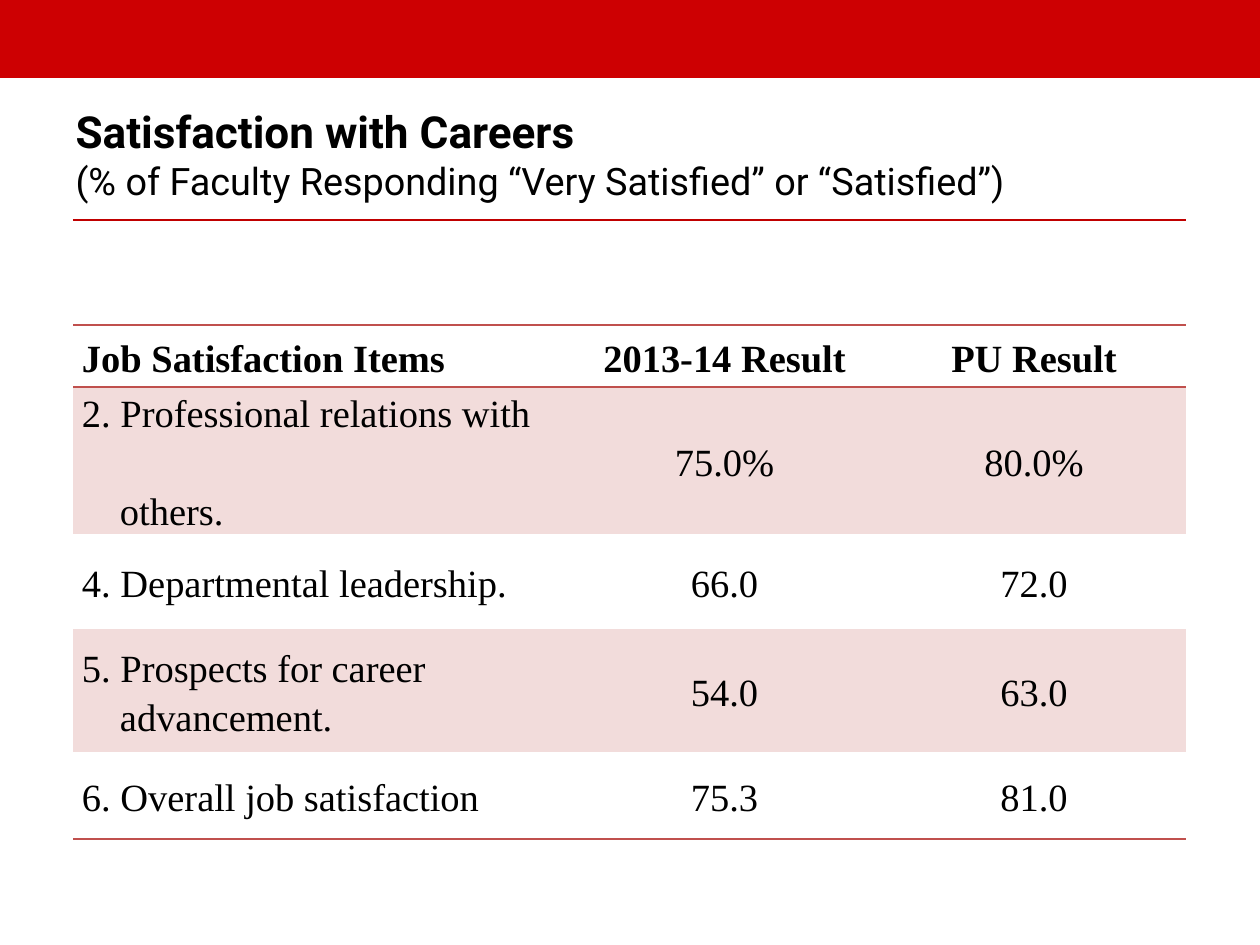
import pptx
import pptx.util
import pptx.dml.color
import pptx.enum.shapes
import pptx.enum.text
import pptx.oxml
import pptx.oxml.ns

SCALE = 914400 / 126
COLORS = {"banner": "CD0002", "rule": "C00000", "border": "C0504D",
          "band": "F2DCDB", "text": "000000"}
ALIGN = pptx.enum.text.PP_ALIGN
MIDDLE = pptx.enum.text.MSO_ANCHOR.MIDDLE
COLUMNS = [494, 315, 304]
HEIGHTS = [62, 146, 95, 123, 87]
HANGING = 38
ROWS = [
    (["Job Satisfaction Items"], "2013-14 Result", "PU Result"),
    (["2. Professional relations with", "others."], "75.0%", "80.0%"),
    (["4. Departmental leadership."], "66.0", "72.0"),
    (["5. Prospects for career", "advancement."], "54.0", "63.0"),
    (["6. Overall job satisfaction"], "75.3", "81.0"),
]
GAPS = {"others.": 28}


def px(length):
    """Turn pixels into EMU."""
    return pptx.util.Emu(round(length * SCALE))


def color(name):
    """Look up a named colour."""
    return pptx.dml.color.RGBColor.from_string(COLORS[name])


def apply(target, values):
    """Set attributes from a dict of format values."""
    for name, value in values.items():
        setattr(target, name, value)


def style_font(font, size, name, bold):
    """Format one font in the text colour."""
    apply(font, {"size": pptx.util.Pt(size), "name": name, "bold": bold})
    font.color.rgb = color("text")


def add_banner(page):
    """Draw the band across the top."""
    banner = page.shapes.add_shape(
        pptx.enum.shapes.MSO_SHAPE.RECTANGLE, 0, 0, px(1260), px(78))
    banner.shadow.inherit = False
    banner.fill.solid()
    banner.fill.fore_color.rgb = color("banner")
    banner.line.fill.background()


def add_title(page):
    """Fill the title placeholder with heading and subheading."""
    title = page.shapes.title
    apply(title, {"left": px(63), "top": px(98), "width": px(1187), "height": px(111)})
    frame = title.text_frame
    apply(frame, {"word_wrap": True, "vertical_anchor": MIDDLE,
                  "auto_size": pptx.enum.text.MSO_AUTO_SIZE.NONE})
    para = frame.paragraphs[0]
    para.alignment = ALIGN.LEFT
    heading = para.add_run()
    heading.text = "Satisfaction with Careers"
    style_font(heading.font, 25.2, "Roboto", True)
    para.add_line_break()
    subheading = para.add_run()
    subheading.text = "(% of Faculty Responding “Very Satisfied” or “Satisfied”)"
    style_font(subheading.font, 21.6, "Roboto", False)


def add_rule(page):
    """Draw the line below the title."""
    rule = page.shapes.add_connector(
        pptx.enum.shapes.MSO_CONNECTOR.STRAIGHT, px(73), px(220), px(1186), px(220))
    rule.line.color.rgb = color("rule")
    rule.line.width = pptx.util.Pt(0.75)
    rule._element.spPr.append(pptx.oxml.parse_xml(
        f'<a:effectLst {pptx.oxml.ns.nsdecls("a")}/>'))


def set_borders(cell, shown):
    """Draw the named sides of a cell and hide the others."""
    properties = cell._tc.get_or_add_tcPr()
    for side in "LRTB":
        paint = (f'<a:solidFill><a:srgbClr val="{COLORS["border"]}"/></a:solidFill>'
                 if side in shown else "<a:noFill/>")
        properties.append(pptx.oxml.parse_xml(
            f'<a:ln{side} {pptx.oxml.ns.nsdecls("a")} w="12700">{paint}</a:ln{side}>'))


def fill_cell(cell, lines, alignment, bold):
    """Write the lines of a cell, with later lines indented."""
    apply(cell, {"margin_left": px(9), "margin_right": px(9), "margin_top": 0,
                 "margin_bottom": 0, "vertical_anchor": MIDDLE})
    frame = cell.text_frame
    for index, line in enumerate(lines):
        para = frame.add_paragraph() if index else frame.paragraphs[0]
        apply(para, {"alignment": alignment, "line_spacing": 1.15})
        if index:
            para._p.get_or_add_pPr().set("marL", str(px(HANGING)))
        if line in GAPS:
            para.space_before = pptx.util.Pt(GAPS[line])
        span = para.add_run()
        span.text = line
        style_font(span.font, 22, "Times New Roman", bold)


def add_results(page):
    """Build the table of satisfaction results."""
    table = page.shapes.add_table(
        len(ROWS), len(COLUMNS), px(73), px(325), px(sum(COLUMNS)), px(sum(HEIGHTS))).table
    apply(table, {"first_row": False, "horz_banding": False})
    for column, width in zip(table.columns, COLUMNS):
        column.width = px(width)
    sides = {0: "TB", 1: "T", len(ROWS) - 1: "B"}
    for number, (items, *results) in enumerate(ROWS):
        table.rows[number].height = px(HEIGHTS[number])
        for place, lines in enumerate([items] + [[result] for result in results]):
            cell = table.cell(number, place)
            fill_cell(cell, lines, ALIGN.CENTER if place else ALIGN.LEFT, number == 0)
            set_borders(cell, sides.get(number, ""))
            if number % 2:
                cell.fill.solid()
                cell.fill.fore_color.rgb = color("band")
            else:
                cell.fill.background()


def main():
    """Build the slide and save the deck."""
    deck = pptx.Presentation()
    apply(deck, {"slide_width": px(1260), "slide_height": px(945)})
    page = deck.slides.add_slide(deck.slide_layouts[5])
    add_banner(page)
    add_title(page)
    add_rule(page)
    add_results(page)
    deck.save("out.pptx")


if __name__ == "__main__":
    main()
